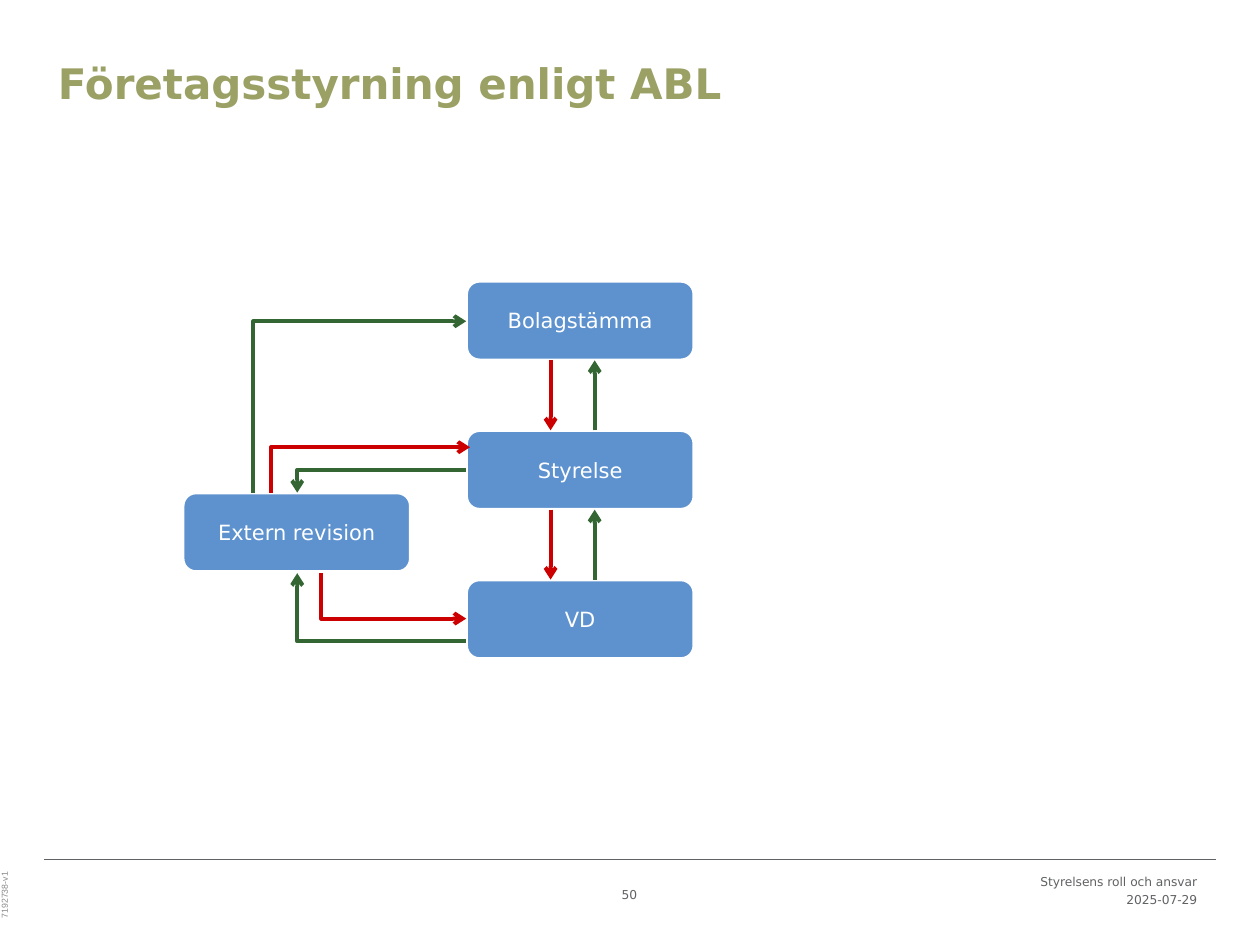
"""Builds the slide on corporate governance under the Swedish Companies Act."""
from lxml.etree import SubElement
from pptx import Presentation
from pptx.dml.color import RGBColor
from pptx.enum.shapes import MSO_CONNECTOR, MSO_SHAPE
from pptx.enum.text import MSO_ANCHOR, PP_ALIGN
from pptx.oxml.ns import qn
from pptx.util import Inches, Pt

FONT = "DejaVu Sans"
OLIVE, BLUE, WHITE = "9BA064", "5D92CF", "FFFFFF"
RED, GREEN, GREY, PALE = "CC0000", "336633", "616264", "898989"

TITLE = "Företagsstyrning enligt ABL"
BODY_SIZE = (1.81, 0.63)
CHAIN_LEFT, CHAIN_TOP, CHAIN_STEP = 3.7, 2.23, 1.185
CHAIN = ["Bolagstämma", "Styrelse", "VD"]
AUDIT = ("Extern revision", 1.45, 3.91)
DOWN_X, UP_X = 4.37, 4.72
BENT_ARROWS = [
    ((2.01, 3.91), (3.7, 2.55), GREEN, "vertical first"),
    ((2.55, 4.55), (3.7, 4.91), RED, "vertical first"),
    ((2.15, 3.91), (3.73, 3.55), RED, "vertical first"),
    ((3.7, 3.73), (2.36, 3.91), GREEN, "horizontal first"),
    ((3.7, 5.09), (2.36, 4.55), GREEN, "horizontal first"),
]
FOOTERS = [
    ("Styrelsens roll och ansvar", (8.05, 6.91, 1.55, 0.2), PP_ALIGN.RIGHT, 0.85),
    ("2025-07-29", (8.48, 7.03, 1.12, 0.16), PP_ALIGN.RIGHT, None),
    ("50", (4.3, 6.99, 1.39, 0.28), PP_ALIGN.CENTER, None),
]
DOCUMENT_ID = ("7192738-v1", (0, 6.87, 0.18, 0.63))


def color(value):
    return RGBColor.from_string(value)


def write(shape, text, size, ink, font=FONT, bold=False, align=PP_ALIGN.LEFT,
          anchor=MSO_ANCHOR.TOP, insets=(0.1, 0.05, 0.1, 0.05), spacing=None, wrap=True):
    frame = shape.text_frame
    frame.word_wrap = wrap
    frame.vertical_anchor = anchor
    (frame.margin_left, frame.margin_top,
     frame.margin_right, frame.margin_bottom) = map(Inches, insets)
    para = frame.paragraphs[0]
    para.alignment = align
    para.space_before = Pt(0)
    if spacing:
        para.line_spacing = spacing
    span = para.add_run()
    span.text = text
    span.font.name, span.font.size, span.font.bold = font, Pt(size), bold
    span.font.color.rgb = color(ink)
    return frame


def add_text(page, text, area, size, ink, **style):
    box = page.shapes.add_textbox(*map(Inches, area))
    return write(box, text, size, ink, **style)


def add_body(page, name, left, top):
    body = page.shapes.add_shape(
        MSO_SHAPE.ROUNDED_RECTANGLE, *map(Inches, (left, top, *BODY_SIZE)))
    body.shadow.inherit = False
    body.fill.solid()
    body.fill.fore_color.rgb = color(BLUE)
    body.line.color.rgb = color(WHITE)
    body.line.width = Pt(2)
    write(body, name, 12, WHITE, align=PP_ALIGN.CENTER,
          anchor=MSO_ANCHOR.MIDDLE, insets=(0.04,) * 4)


def add_line(page, start, end, ink, width=2.25, arrow=True, bend=None):
    kind = MSO_CONNECTOR.ELBOW if bend else MSO_CONNECTOR.STRAIGHT
    line = page.shapes.add_connector(kind, *map(Inches, (*start, *end)))
    line.line.color.rgb = color(ink)
    line.line.width = Pt(width)
    properties = line._element.spPr
    SubElement(properties, qn("a:effectLst"))
    if arrow:
        SubElement(line.line._get_or_add_ln(), qn("a:tailEnd"), type="arrow")
    geometry = properties.find(qn("a:prstGeom"))
    if bend == "horizontal first":
        geometry.set("prst", "bentConnector2")
    elif bend == "vertical first":
        SubElement(geometry.find(qn("a:avLst")), qn("a:gd"), name="adj1", fmla="val 0")


def main():
    deck = Presentation()
    deck.slide_width, deck.slide_height = Inches(10), Inches(7.5)
    page = deck.slides.add_slide(deck.slide_layouts[5])

    title = page.shapes.title
    title.left, title.top, title.width, title.height = map(Inches, (0.36, 0.41, 9, 0.85))
    write(title, TITLE, 24, OLIVE, bold=True)
    add_line(page, (0.35, 6.82), (9.65, 6.82), GREY, width=0.75, arrow=False)

    tops = [CHAIN_TOP + index * CHAIN_STEP for index in range(len(CHAIN))]
    for name, top in zip(CHAIN, tops):
        add_body(page, name, CHAIN_LEFT, top)
    add_body(page, *AUDIT)

    for upper, lower in zip(tops, tops[1:]):
        bottom = upper + BODY_SIZE[1]
        add_line(page, (DOWN_X, bottom), (DOWN_X, lower), RED)
        add_line(page, (UP_X, lower), (UP_X, bottom), GREEN)
    for start, end, ink, bend in BENT_ARROWS:
        add_line(page, start, end, ink, bend=bend)

    for text, area, align, spacing in FOOTERS:
        add_text(page, text, area, 7, GREY, align=align, spacing=spacing)
    frame = add_text(page, *DOCUMENT_ID, 5, PALE, font="Arial", spacing=0.95,
                     insets=(0, 0.05, 0.1, 0.21), wrap=False)
    frame._txBody.bodyPr.set("vert", "vert270")
    deck.save("out.pptx")


if __name__ == "__main__":
    main()
